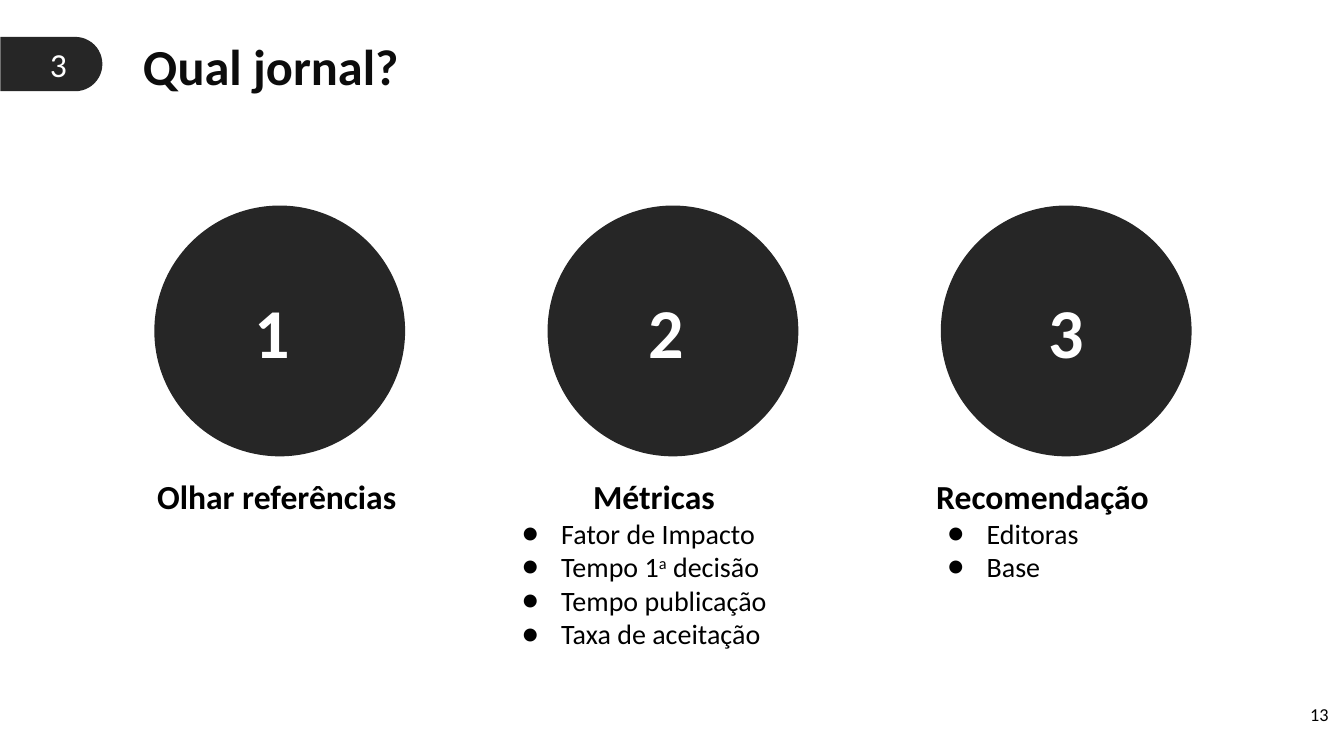
from pptx import Presentation
from pptx.dml.color import RGBColor as RGB
from pptx.enum.shapes import MSO_SHAPE as SHAPE
from pptx.enum.text import MSO_ANCHOR as ANCHOR, MSO_AUTO_SIZE as AUTO, PP_ALIGN as ALIGN
from pptx.oxml.ns import qn
from pptx.util import Cm, Pt
from lxml.etree import SubElement as Sub

DARK, WHITE, BLACK = "262626", "FFFFFF", "000000"
LEFT, MID, RIGHT = ALIGN.LEFT, ALIGN.CENTER, ALIGN.RIGHT


class Deck:
    """Holds the style and the current slide, and draws each kind of element."""

    font = "Calibri"

    def __init__(self):
        self.prs = Presentation()
        self.prs.slide_width, self.prs.slide_height = Cm(33.87), Cm(19.05)
        self.slide = self.prs.slides.add_slide(self.prs.slide_layouts[3])

    def color(self, code):
        return RGB.from_string(code)

    def place(self, shape, box):
        shape.left, shape.top, shape.width, shape.height = map(Cm, box)
        frame = shape.text_frame
        frame.word_wrap, frame.auto_size = True, AUTO.NONE
        return frame

    def style(self, para, size, code=BLACK, bold=False, align=LEFT):
        para.alignment = align
        para.space_before = Pt(0)
        font = para.font
        font.name, font.size, font.bold = self.font, Pt(size), bold
        font.color.rgb = self.color(code)

    def shape(self, kind, box, turn=0):
        item = self.slide.shapes.add_shape(kind, *map(Cm, box))
        item.rotation = turn
        item.shadow.inherit = False
        item.fill.solid()
        item.fill.fore_color.rgb = self.color(DARK)
        item.line.fill.background()
        return item

    def text(self, words, box, size, code=BLACK, bold=False, align=MID):
        frame = self.place(self.slide.shapes.add_textbox(0, 0, 0, 0), box)
        frame.text = words
        self.style(frame.paragraphs[0], size, code, bold, align)

    def title(self, words, box):
        frame = self.place(self.slide.shapes.title, box)
        frame.text = words
        self.style(frame.paragraphs[0], 36, "0C0C0C", True, MID)

    def bullet(self, para, mark=None):
        props = para._p.get_or_add_pPr()
        props.set("marL", str(Cm(1.27) if mark else 0))
        props.set("indent", str(Cm(-0.99) if mark else 0))
        if mark:
            Sub(Sub(props, qn("a:buClr")), qn("a:srgbClr")).set("val", BLACK)
            Sub(props, qn("a:buFont")).set("typeface", self.font)
            Sub(props, qn("a:buChar")).set("char", mark)
        else:
            Sub(props, qn("a:buNone"))

    def list(self, slot, head, items, box, align):
        frame = self.place(self.slide.placeholders[slot], box)
        frame.vertical_anchor = ANCHOR.TOP
        para = frame.paragraphs[0]
        self.bullet(para)
        para.add_run().text = head
        self.style(para, 24, bold=True, align=align)
        for item in items:
            para = frame.add_paragraph()
            self.bullet(para, "●")
            for i, part in enumerate(item.split("^")):
                run = para.add_run()
                run.text = part
                if i == 1:
                    run._r.get_or_add_rPr().set("baseline", "30000")
            self.style(para, 20)


def main():
    deck = Deck()
    deck.shape(SHAPE.ROUND_2_SAME_RECTANGLE, (0.61, 0.33, 1.37, 2.57), 90).adjustments[0] = 0.5
    deck.text("3", (0.58, 0.99, 1.78, 1.27), 24, WHITE)
    deck.title("Qual jornal?", (2.67, 0.74, 8.31, 1.8))

    for i, shift in enumerate((-0.18, -0.18, 0)):
        left = 3.89 + 9.91 * i
        deck.shape(SHAPE.OVAL, (left, 5.18, 6.32, 6.32))
        deck.text(str(i + 1), (left + 0.89 + shift, 7.14, 4.54, 2.39), 50, WHITE, True)

    deck.text("Olhar referências", (3.28, 11.86, 7.39, 1.3), 24, bold=True)
    deck.list(1, "Métricas",
              ("Fator de Impacto", "Tempo 1^a^ decisão", "Tempo publicação", "Taxa de aceitação"),
              (12.62, 11.86, 7.72, 4.22), MID)
    deck.list(2, "Recomendação", ("Editoras", "Base"), (23.34, 11.86, 6.65, 2.84), LEFT)
    deck.text("13", (31.7, 17.6, 2.03, 1.45), 13, align=RIGHT)
    deck.prs.save("out.pptx")


if __name__ == "__main__":
    main()
